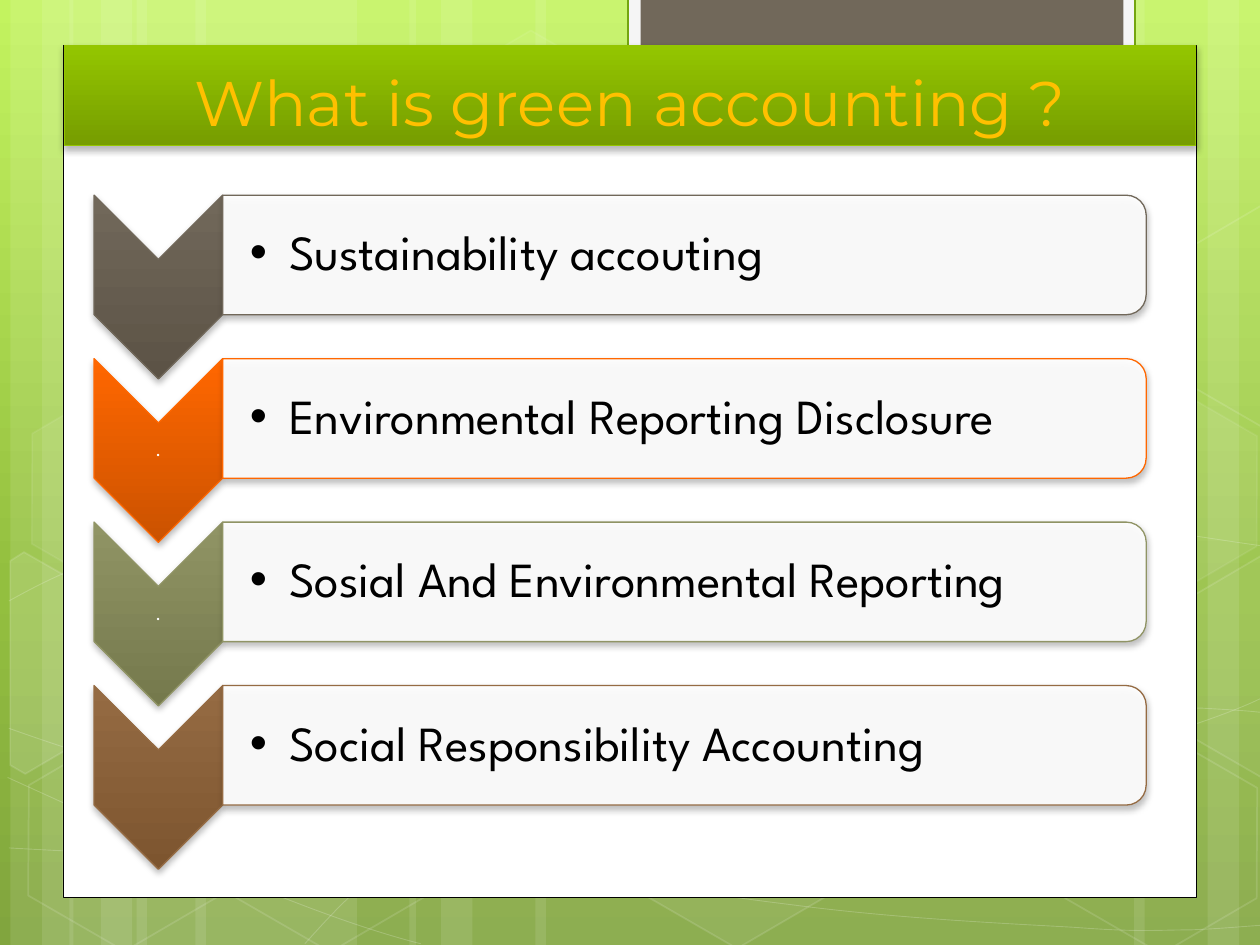
from math import cos, radians, sin

from lxml import etree
from pptx import Presentation
from pptx.dml.color import RGBColor
from pptx.enum.shapes import MSO_SHAPE
from pptx.enum.text import MSO_ANCHOR, MSO_AUTO_SIZE, PP_ALIGN
from pptx.oxml.ns import qn
from pptx.util import Pt

RECT, HEX = MSO_SHAPE.RECTANGLE, MSO_SHAPE.HEXAGON
CHEVRON, ROUND = MSO_SHAPE.CHEVRON, MSO_SHAPE.ROUND_2_SAME_RECTANGLE
BOTTOM, MIDDLE = MSO_ANCHOR.BOTTOM, MSO_ANCHOR.MIDDLE
CENTER, LEFT = PP_ALIGN.CENTER, PP_ALIGN.LEFT
NO_FIT = MSO_AUTO_SIZE.NONE

HUES = {
    "white": "FFFFFF", "black": "000000", "gold": "FFC000",
    "tab": "71685A", "tab rim": "F5F5F5", "tab line": "74A510",
    "green": "94C600", "deep green": "769D00",
    "sky": "C3F35F", "leaf": "93BF3F", "moss": "81A53E",
    "stone": "71685A", "deep stone": "5C5346",
    "orange": "FF6700", "deep orange": "CB5200",
    "olive": "909465", "deep olive": "75794C",
    "brown": "956B43", "deep brown": "7D552F",
}
HEAD = "What is green accounting ?"
ITEMS = [  # text, colour, mark in the chevron
    ("Sustainability accouting", "stone", ""),
    ("Environmental Reporting Disclosure", "orange", "."),
    ("Sosial And Environmental Reporting", "olive", "."),
    ("Social Responsibility Accounting", "brown", ""),
]
STREAKS = [  # left, width, turn
    (78, 126, 0), (6, 36, 0), (24, 60, 0), (111.6, 126, 0), (39.6, 36, 0),
    (57.6, 60, 0), (528, 126, 180), (690, 36, 180), (648, 60, 180),
    (306, 222, 0), (234, 36, 0), (252, 60, 0),
]
CURVES = [  # Bezier points in inches: start, then three for each piece
    [(.07, 6.73), (.61, 6.76), (1.15, 6.79), (1.9, 6.78), (2.65, 6.77),
     (3.58, 6.75), (4.58, 6.65), (5.58, 6.55), (7, 6.36), (7.92, 6.17),
     (8.83, 5.98), (9.77, 5.68), (10.07, 5.51)],
    [(.07, 4.77), (.36, 4.61), (.65, 4.46), (1.21, 4.31), (1.78, 4.16),
     (2.59, 3.94), (3.47, 3.87), (4.36, 3.8), (5.44, 3.79), (6.54, 3.87),
     (7.64, 3.95), (9.47, 4.26), (10.07, 4.34)],
    [(.06, 6.17), (1.27, 6.72), (2.47, 7.27), (3.34, 7.49)],
    [(.07, 5.78), (.38, 5.89), (.7, 6), (1.28, 6.16), (1.86, 6.31),
     (2.73, 6.56), (3.57, 6.73), (4.4, 6.9), (5.45, 7.08), (6.28, 7.18),
     (7.11, 7.29), (8, 7.33), (8.53, 7.36), (9.05, 7.4), (9.19, 7.38),
     (9.45, 7.38), (9.71, 7.37), (9.89, 7.35), (10.07, 7.34)],
    [(2.42, 7.49), (2.6, 7.29), (2.78, 7.09), (3.02, 6.91), (3.26, 6.73),
     (3.6, 6.53), (3.88, 6.39), (4.16, 6.25), (4.33, 6.19), (4.7, 6.09),
     (5.06, 5.99), (5.73, 5.85), (6.08, 5.78), (6.44, 5.71), (6.49, 5.71),
     (6.8, 5.69), (7.11, 5.66), (7.6, 5.63), (7.94, 5.62), (8.29, 5.61),
     (8.86, 5.62), (8.86, 5.62), (9.08, 5.62), (9.31, 5.62), (9.53, 5.62),
     (9.71, 5.63), (9.88, 5.64), (9.97, 5.65), (10.06, 5.66), (10.03, 5.65),
     (10.06, 5.66)],
]
CELLS = [  # left, top, fill opacity, line opacity
    (240.5, 26, 4, 8), (358, 424, 6, 12), (8, 425.5, 0, 12),
    (10, 224.5, 7, 8), (125.5, 426, 0, 12), (542, 326, 10, 12),
    (600.5, 427, 0, 12), (600.5, 226, 7, 8),
]
EDGES = [  # outline and middle in inches, fill opacity
    ([(.08, 4.45), (.19, 4.38), (.96, 4.82), (.95, 5.7), (.2, 6.14),
      (.08, 6.07)], (.36, 5.35), 10),
    ([(9.26, 4.85), (10.01, 4.41), (10.09, 4.46), (10.09, 6.13),
      (10.02, 6.17), (9.26, 5.73)], (9.85, 5.2), 4),
    ([(9.26, 2.07), (10.01, 1.63), (10.1, 1.68), (10.09, 3.35),
      (10.02, 3.39), (9.26, 2.95)], (9.85, 2.41), 0),
]


def rgb(hue):
    return RGBColor.from_string(HUES[hue])


def node(root, tag, **attrs):
    return etree.SubElement(root, qn(tag), {k: str(v) for k, v in attrs.items()})


def fade(root, alpha):
    """Set the opacity, in percent, of the solid fill right under root."""
    node(root.find(qn("a:solidFill"))[0], "a:alpha", val=alpha * 1000)


def blend(root, stops):
    """Turn the solid fill under root into an upright gradient."""
    grad = etree.Element(qn("a:gradFill"), rotWithShape="0")
    bag = node(grad, "a:gsLst")
    for pos, hue in stops:
        node(node(bag, "a:gs", pos=pos * 1000), "a:srgbClr", val=HUES[hue])
    node(grad, "a:lin", ang=5400000, scaled=0)
    root.replace(root.find(qn("a:solidFill")), grad)


def paint(shape, hue=None, alpha=100, line=None, width=1, sheer=100):
    """Fill and outline a shape; alpha and sheer are opacities."""
    shape.shadow.inherit = False
    if hue and alpha:
        shape.fill.solid()
        shape.fill.fore_color.rgb = rgb(hue)
        if alpha < 100:
            fade(shape._element.spPr, alpha)
    else:
        shape.fill.background()
    if line:
        shape.line.color.rgb = rgb(line)
        shape.line.width = Pt(width)
        if sheer < 100:
            fade(shape.line._ln, sheer)
    else:
        shape.line.fill.background()


def shade(shape):
    glow = node(shape._element.spPr.find(qn("a:effectLst")), "a:outerShdw",
                blurRad=Pt(4), dist=Pt(2), dir=5400000, rotWithShape=0)
    node(node(glow, "a:srgbClr", val=HUES["black"]), "a:alpha", val=28000)


def place(shapes, kind, left, top, wide, high, turn=0):
    shape = shapes.add_shape(kind, Pt(left), Pt(top), Pt(wide), Pt(high))
    shape.rotation = turn
    return shape


def trace(shapes, dots, close):
    dots = [(Pt(x * 72), Pt(y * 72)) for x, y in dots]
    pen = shapes.build_freeform(*dots[0], scale=1.0)
    pen.add_line_segments(dots[1:], close=close)
    return pen.convert_to_shape()


def bend(shape):
    """Join every three straight pieces into one cubic Bezier piece."""
    lines = list(shape._element.iter(qn("a:lnTo")))
    for i in range(0, len(lines), 3):
        cubic = etree.Element(qn("a:cubicBezTo"))
        lines[i].addprevious(cubic)
        for line in lines[i:i + 3]:
            cubic.append(line[0])
            line.getparent().remove(line)
    return shape


def spin(dots, mid, turn):
    c, s = cos(radians(turn)), sin(radians(turn))
    moves = [(x - mid[0], y - mid[1]) for x, y in dots]
    return [(mid[0] + x * c - y * s, mid[1] + x * s + y * c) for x, y in moves]


def write(shape, text, font, size, hue, align, anchor):
    frame = shape.text_frame
    frame.text = text
    frame.word_wrap = True
    frame.auto_size = NO_FIT
    frame.vertical_anchor = anchor
    para = frame.paragraphs[0]
    para.alignment = align
    face = para.runs[0].font
    face.name, face.size, face.color.rgb = font, Pt(size), rgb(hue)
    return para


def label(shapes, box, pad, *style):
    """Add a text box with its own left inset and small others."""
    shape = shapes.add_textbox(*map(Pt, box))
    frame = shape.text_frame
    frame.margin_left = Pt(pad)
    frame.margin_top = frame.margin_right = frame.margin_bottom = Pt(1)
    para = write(shape, *style, MIDDLE)
    para.line_spacing = 0.9
    para.space_after = Pt(4)
    return para


def scene(slide):
    shapes = slide.shapes
    slide.background.fill.solid()
    blend(slide._element.find(".//" + qn("p:bgPr")),
          [(0, "sky"), (62, "leaf"), (100, "moss")])
    for left, wide, turn in STREAKS:
        paint(place(shapes, RECT, left, 0, wide, 540, turn), "white", 10)
    for dots in CURVES:
        paint(bend(trace(shapes, dots, False)), line="white", width=0.5, sheer=20)
    for left, top, alpha, sheer in CELLS:
        cell = place(shapes, HEX, left, top, 126, 109.5, 30)
        cell.adjustments[0] = 0.285
        paint(cell, "white", alpha, "white", 1, sheer)
    for dots, mid, alpha in EDGES:
        edge = trace(shapes, spin(dots, mid, -30), True)
        edge.rotation = 30
        paint(edge, "white", alpha, "white", 1, 12)
    paint(place(shapes, RECT, 36, 26, 648, 487), "white", line="black", width=0.5)
    paint(place(shapes, RECT, 359, -1.5, 289.5, 54.7), "tab rim",
          line="tab line", width=1.25)
    paint(place(shapes, RECT, 366, -1.5, 276, 49), "tab")


def banner(slide):
    title = slide.shapes.title
    slide.shapes._spTree.append(title._element)
    title.left, title.top, title.width, title.height = map(Pt, (36.8, 26, 646.4, 57))
    paint(title, "green", line="green", width=0.75)
    blend(title._element.spPr, [(0, "green"), (100, "deep green")])
    shade(title)
    write(title, HEAD, "Montserrat", 36, "gold", CENTER, BOTTOM)


def row(shapes, top, text, hue, mark):
    font = "League Spartan"
    arrow = place(shapes, CHEVRON, 38, top + 15.8, 105, 73.5, 90)
    paint(arrow, hue, line=hue, width=0.75)
    blend(arrow._element.spPr, [(0, hue), (100, "deep " + hue)])
    shade(arrow)
    if mark:
        label(shapes, (53.8, top + 36.8, 73.5, 31.7), 1, mark, font, 11, "white", CENTER)
    card = place(shapes, ROUND, 357, top - 229.6, 68.3, 527.6, 90)
    paint(card, "white", 90, hue, 0.75)
    shade(card)
    para = label(shapes, (127.2, top + 3.4, 524, 61.5), 15.6,
                 text, font, 28, "black", LEFT)
    props = para._p.get_or_add_pPr()
    props.set("marL", str(Pt(22.5)))
    props.set("indent", str(Pt(-22.5)))
    node(props, "a:buFont", typeface="Arial")
    node(props, "a:buChar", char="•")


def main():
    deck = Presentation()
    deck.slide_width, deck.slide_height = Pt(720), Pt(540)
    slide = deck.slides.add_slide(deck.slide_layouts[5])
    scene(slide)
    banner(slide)
    for i, item in enumerate(ITEMS):
        row(slide.shapes, 111.5 + 93.4 * i, *item)
    deck.save("out.pptx")


if __name__ == "__main__":
    main()
